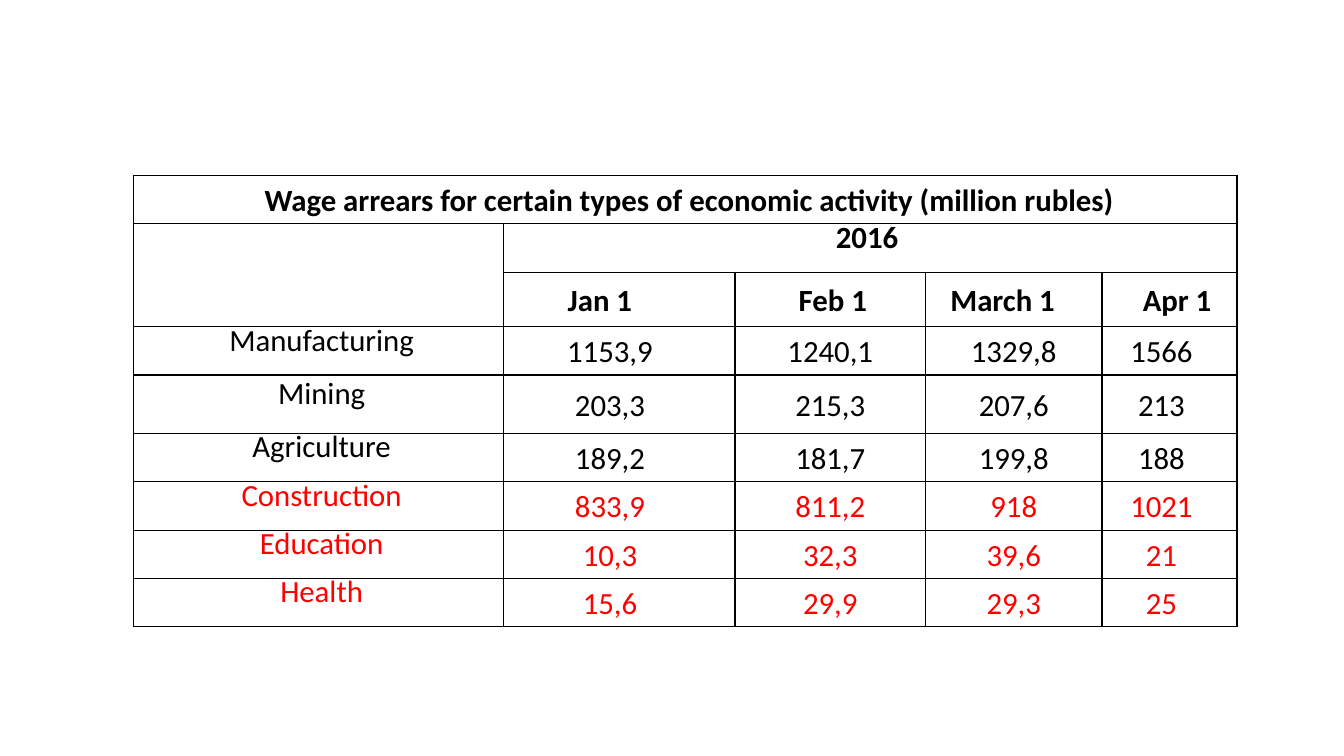
from lxml.etree import SubElement
from pptx import Presentation
from pptx.dml.color import RGBColor
from pptx.enum.text import MSO_ANCHOR, PP_ALIGN
from pptx.oxml.ns import qn
from pptx.util import Inches, Pt

BLACK = RGBColor(0x00, 0x00, 0x00)
RED = RGBColor(0xFF, 0x00, 0x00)
WHITE = RGBColor(0xFF, 0xFF, 0xFF)

FONT_NAME = "Calibri"
FONT_SIZE = Pt(22)
LINE_SPACING = 1.07

# Table grid, in inches
LEFT, TOP = 1.32, 1.74
COLUMN_WIDTHS = [3.67, 2.3, 1.89, 1.75, 1.34]
ROW_HEIGHTS = [0.48, 0.48, 0.54, 0.48, 0.58, 0.48, 0.48, 0.48, 0.48]
FIRST_DATA_ROW = 3

# Left and right paragraph indents, in inches
TITLE_INDENT = (0.08, 0)
YEAR_INDENT = (1.62, 1.68)
DATE_INDENTS = [(0.12, 0.5), (0.05, 0), (0.11, 0.33), (0.15, 0)]
ACTIVITY_INDENT = (0.07, 0)
VALUE_INDENTS = [(0.32, 0.5), (0.36, 0.36), (0.25, 0.25), (0, 0.16)]

TITLE = "Wage arrears for certain types of economic activity (million rubles)"
YEAR = "2016"
DATES = ["Jan 1", "Feb 1", "March 1", "Apr 1"]
ARREARS = [
    ("Manufacturing", ["1153,9", "1240,1", "1329,8", "1566"], BLACK),
    ("Mining", ["203,3", "215,3", "207,6", "213"], BLACK),
    ("Agriculture", ["189,2", "181,7", "199,8", "188"], BLACK),
    ("Construction", ["833,9", "811,2", "918", "1021"], RED),
    ("Education", ["10,3", "32,3", "39,6", "21"], RED),
    ("Health", ["15,6", "29,9", "29,3", "25"], RED),
]


def style_cell(cell):
    """Give a cell thin black borders, a white fill and no insets."""
    properties = cell._tc.get_or_add_tcPr()
    for side in ("a:lnL", "a:lnR", "a:lnT", "a:lnB"):
        line = SubElement(properties, qn(side), w=str(Pt(1)))
        fill = SubElement(line, qn("a:solidFill"))
        SubElement(fill, qn("a:srgbClr"), val=str(BLACK))
    cell.fill.solid()
    cell.fill.fore_color.rgb = WHITE
    cell.vertical_anchor = MSO_ANCHOR.MIDDLE
    cell.margin_left = cell.margin_right = 0
    cell.margin_top = cell.margin_bottom = 0


def write_cell(cell, text, indent, color=BLACK, bold=False,
               spacing=LINE_SPACING, before=0):
    paragraph = cell.text_frame.paragraphs[0]
    paragraph.text = text
    paragraph.alignment = PP_ALIGN.CENTER
    paragraph.line_spacing = spacing
    paragraph.space_before = Pt(before)
    properties = paragraph._p.get_or_add_pPr()
    for name, inches in zip(("marL", "marR"), indent):
        properties.set(name, str(Inches(inches)))
    font = paragraph.runs[0].font
    font.name, font.size, font.bold = FONT_NAME, FONT_SIZE, bold
    font.color.rgb = color


def add_grid(slide):
    """Add the empty bordered table with its merged header cells."""
    table = slide.shapes.add_table(
        len(ROW_HEIGHTS), len(COLUMN_WIDTHS), Inches(LEFT), Inches(TOP),
        Inches(sum(COLUMN_WIDTHS)), Inches(sum(ROW_HEIGHTS))).table
    table.first_row = table.horz_banding = False
    for column, width in zip(table.columns, COLUMN_WIDTHS):
        column.width = Inches(width)
    for row, height in zip(table.rows, ROW_HEIGHTS):
        row.height = Inches(height)
    for cell in table.iter_cells():
        style_cell(cell)
    table.cell(0, 0).merge(table.cell(0, 4))
    table.cell(1, 0).merge(table.cell(2, 0))
    table.cell(1, 1).merge(table.cell(1, 4))
    return table


def fill_header(table):
    write_cell(table.cell(0, 0), TITLE, TITLE_INDENT, bold=True, before=0.1)
    write_cell(table.cell(1, 1), YEAR, YEAR_INDENT, bold=True,
               spacing=Pt(12.6))
    for column, (date, indent) in enumerate(zip(DATES, DATE_INDENTS), 1):
        write_cell(table.cell(2, column), date, indent, bold=True, before=6.3)


def fill_arrears(table):
    for row, (activity, values, color) in enumerate(ARREARS, FIRST_DATA_ROW):
        # The first activity sits one line lower than the others
        before = 12.2 if row == FIRST_DATA_ROW else 0
        write_cell(table.cell(row, 0), activity, ACTIVITY_INDENT, color,
                   spacing=Pt(12.1), before=before)
        for column, (value, indent) in enumerate(zip(values, VALUE_INDENTS), 1):
            write_cell(table.cell(row, column), value, indent, color,
                       before=0.6)


def main():
    presentation = Presentation()
    presentation.slide_width = Inches(13.33)
    presentation.slide_height = Inches(7.5)
    # Blank layout: the heading is part of the table
    slide = presentation.slides.add_slide(presentation.slide_layouts[6])
    table = add_grid(slide)
    fill_header(table)
    fill_arrears(table)
    presentation.save("out.pptx")


if __name__ == "__main__":
    main()
